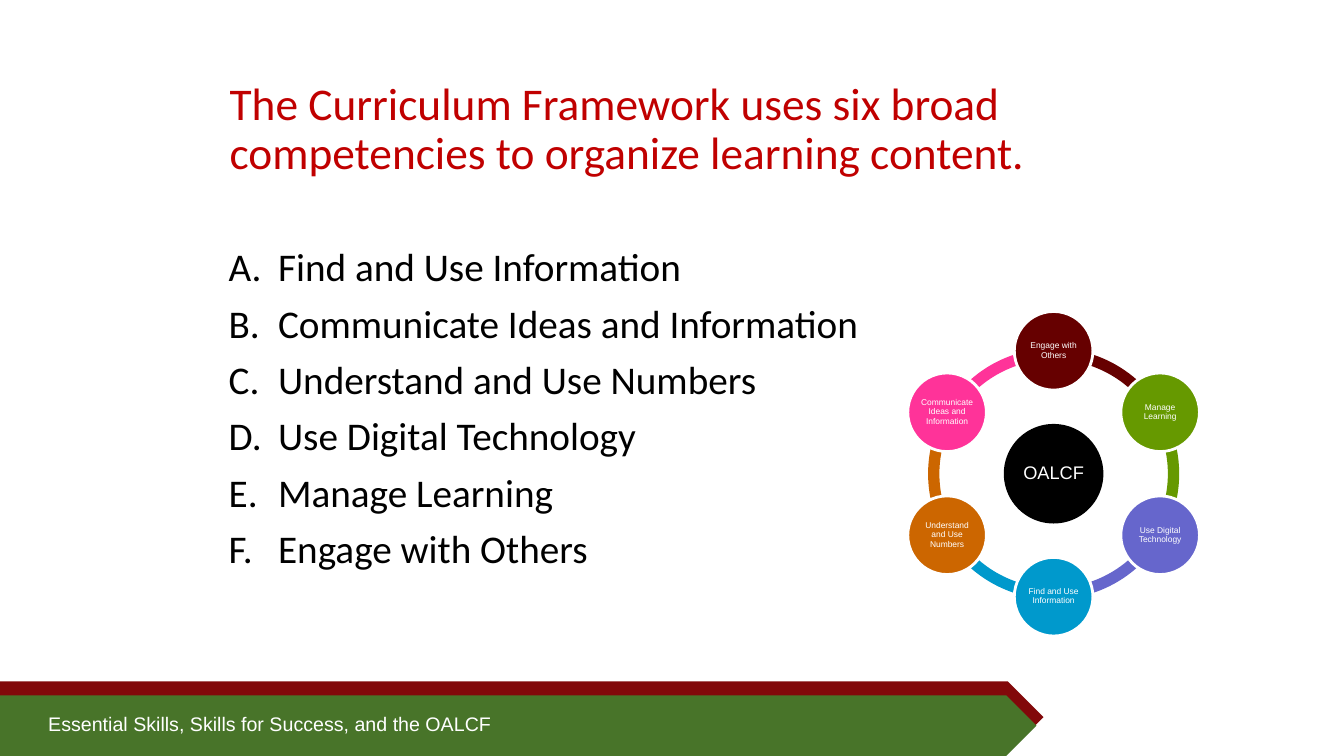
import math
from lxml import etree
from pptx import Presentation
from pptx.dml.color import RGBColor
from pptx.enum.shapes import MSO_SHAPE
from pptx.enum.text import MSO_ANCHOR, PP_ALIGN
from pptx.oxml.ns import qn
from pptx.util import Inches, Pt

PLATE, ARC, OVAL = MSO_SHAPE.PENTAGON, MSO_SHAPE.BLOCK_ARC, MSO_SHAPE.OVAL
TOP, MIDDLE = MSO_ANCHOR.TOP, MSO_ANCHOR.MIDDLE
LEFT, CENTER = PP_ALIGN.LEFT, PP_ALIGN.CENTER

TITLE = "The Curriculum Framework uses six broad competencies to organize learning content."
COMPETENCIES = [
    "A.\tFind and Use Information",
    "B.\tCommunicate Ideas and Information",
    "C.\tUnderstand and Use Numbers",
    "D.\tUse Digital Technology",
    "E.\tManage Learning",
    "F.\tEngage with Others",
]
FOOTER = "Essential Skills, Skills for Success, and the OALCF"
BANNERS = [((0, 6.76, 10.35, 0.71), "82080A"), ((0, 6.9, 10.28, 0.6), "487429")]
HUB = ("OALCF", "000000")
NODES = [
    ("Engage with Others", "660000"),
    ("Manage Learning", "669900"),
    ("Use Digital Technology", "6666CC"),
    ("Find and Use Information", "0099CC"),
    ("Understand and Use Numbers", "CC6600"),
    ("Communicate Ideas and Information", "FF3399"),
]
CX, CY = 10.45, 4.7
RING_SIZE, ORBIT, NODE_SIZE, HUB_SIZE = 2.49, 1.22, 0.78, 0.96
HANG = 0.49


def rgb(color):
    return RGBColor.from_string(color)


def add_shape(kind, box, fill, line=None):
    sp = s.shapes.add_shape(kind, *map(Inches, box))
    sp.shadow.inherit = False
    sp.fill.solid()
    sp.fill.fore_color.rgb = rgb(fill)
    if line:
        sp.line.color.rgb = rgb(line)
        sp.line.width = Pt(2)
    else:
        sp.line.fill.background()
    return sp


def write(sp, lines, size, font, color, align=LEFT, anchor=TOP, spacing=0.9, before=0, inset=None):
    tf = sp.text_frame
    tf.word_wrap = True
    tf.vertical_anchor = anchor
    if inset is not None:
        tf.margin_left = tf.margin_right = tf.margin_top = tf.margin_bottom = Inches(inset)
    tf.text = "\n".join(lines)
    for i, p in enumerate(tf.paragraphs):
        p.alignment = align
        p.line_spacing = spacing
        p.space_before = Pt(before if i else 0)
        for r in p.runs:
            r.font.size = Pt(size)
            r.font.name = font
            r.font.color.rgb = rgb(color)
    return tf


def add_text(box, lines, *style, **layout):
    return write(s.shapes.add_textbox(*map(Inches, box)), lines, *style, **layout)


def add_circle(x, y, size, label, fill, line, text_size, inset):
    sp = add_shape(OVAL, (x - size / 2, y - size / 2, size, size), fill, line)
    write(sp, [label], text_size, "Arial", "FFFFFF", CENTER, MIDDLE, inset=inset)


prs = Presentation()
prs.slide_width, prs.slide_height = Inches(13.33), Inches(7.5)
s = prs.slides.add_slide(prs.slide_layouts[6])

for box, color in BANNERS:
    add_shape(PLATE, box, color)
add_text((0.38, 7.01, 9.27, 0.34), [FOOTER], 14, "Arial", "FFFFFF", spacing=1)

add_text((2.18, 0.67, 9, 1.25), [TITLE], 32.4, "Calibri", "C00000", anchor=MIDDLE)
tf = add_text((2.17, 2.41, 9, 4.29), COMPETENCIES, 28, "Calibri", "000000", before=10)
for p in tf.paragraphs:
    pPr = p._p.get_or_add_pPr()
    pPr.set("marL", str(Inches(HANG)))
    pPr.set("indent", str(-Inches(HANG)))
    etree.SubElement(pPr, qn("a:buNone"))

step = 360 / len(NODES)
for i, (label, color) in enumerate(NODES):
    arc = add_shape(ARC, (CX - RING_SIZE / 2, CY - RING_SIZE / 2, RING_SIZE, RING_SIZE), color)
    start = 270 + i * step
    arc.adjustments[0] = start % 360 * 0.6
    arc.adjustments[1] = (start + step) % 360 * 0.6
    arc.adjustments[2] = 0.045

add_circle(CX, CY, HUB_SIZE, *HUB, HUB[1], 13, 0.02)
for i, (label, color) in enumerate(NODES):
    angle = math.radians(270 + i * step)
    x, y = CX + ORBIT * math.cos(angle), CY + ORBIT * math.sin(angle)
    add_circle(x, y, NODE_SIZE, label, color, "FFFFFF", 6, 0.01)

prs.save("out.pptx")
